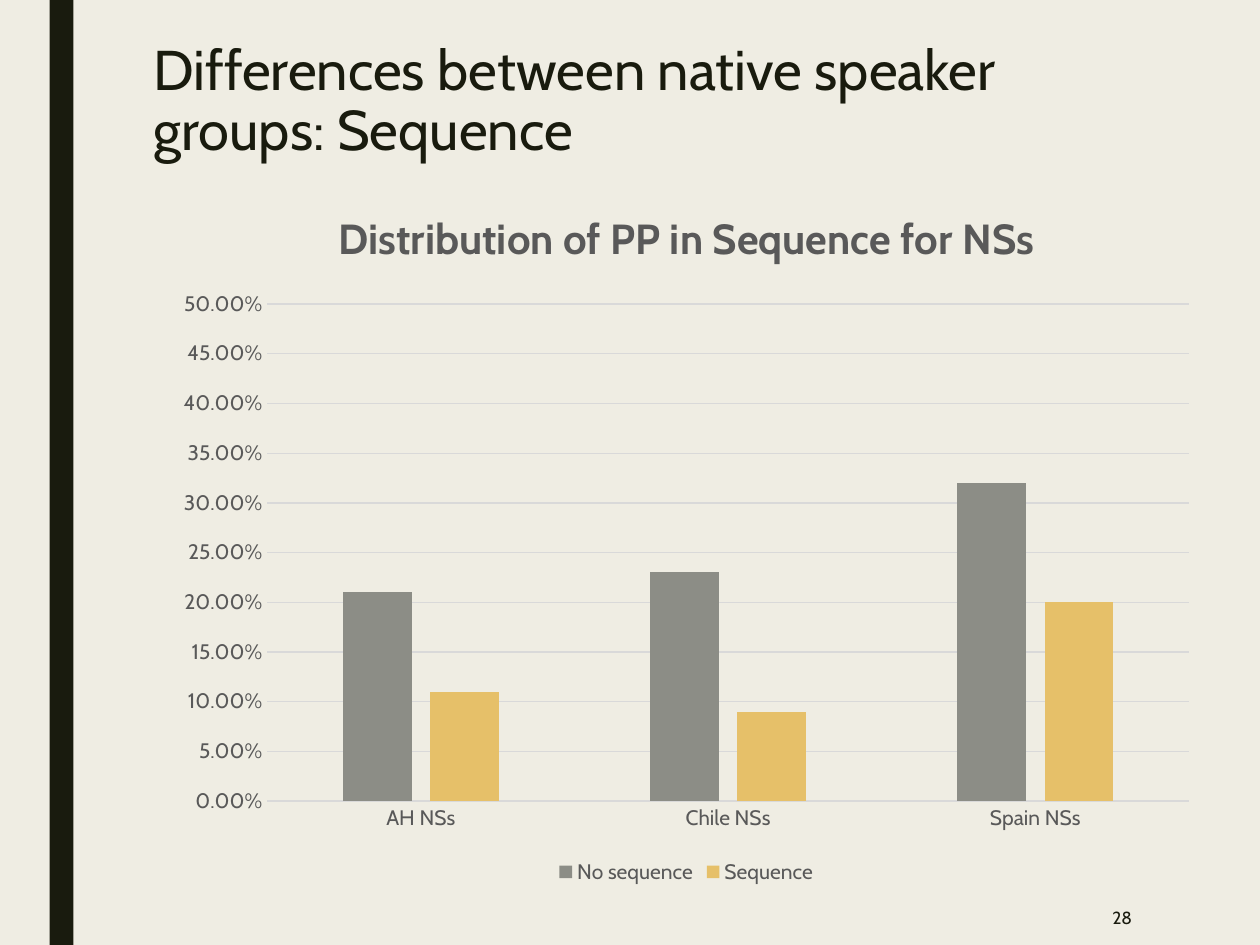
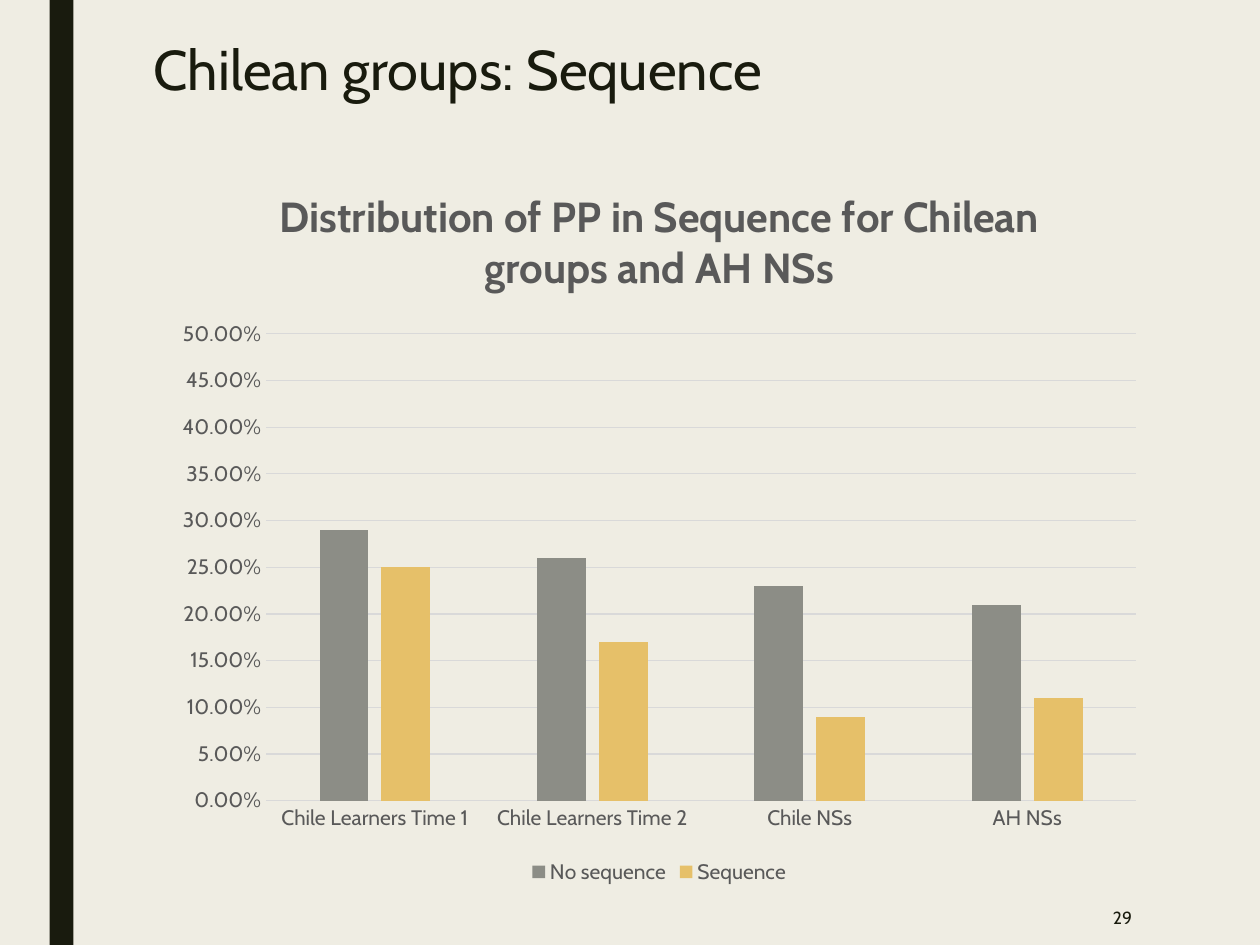
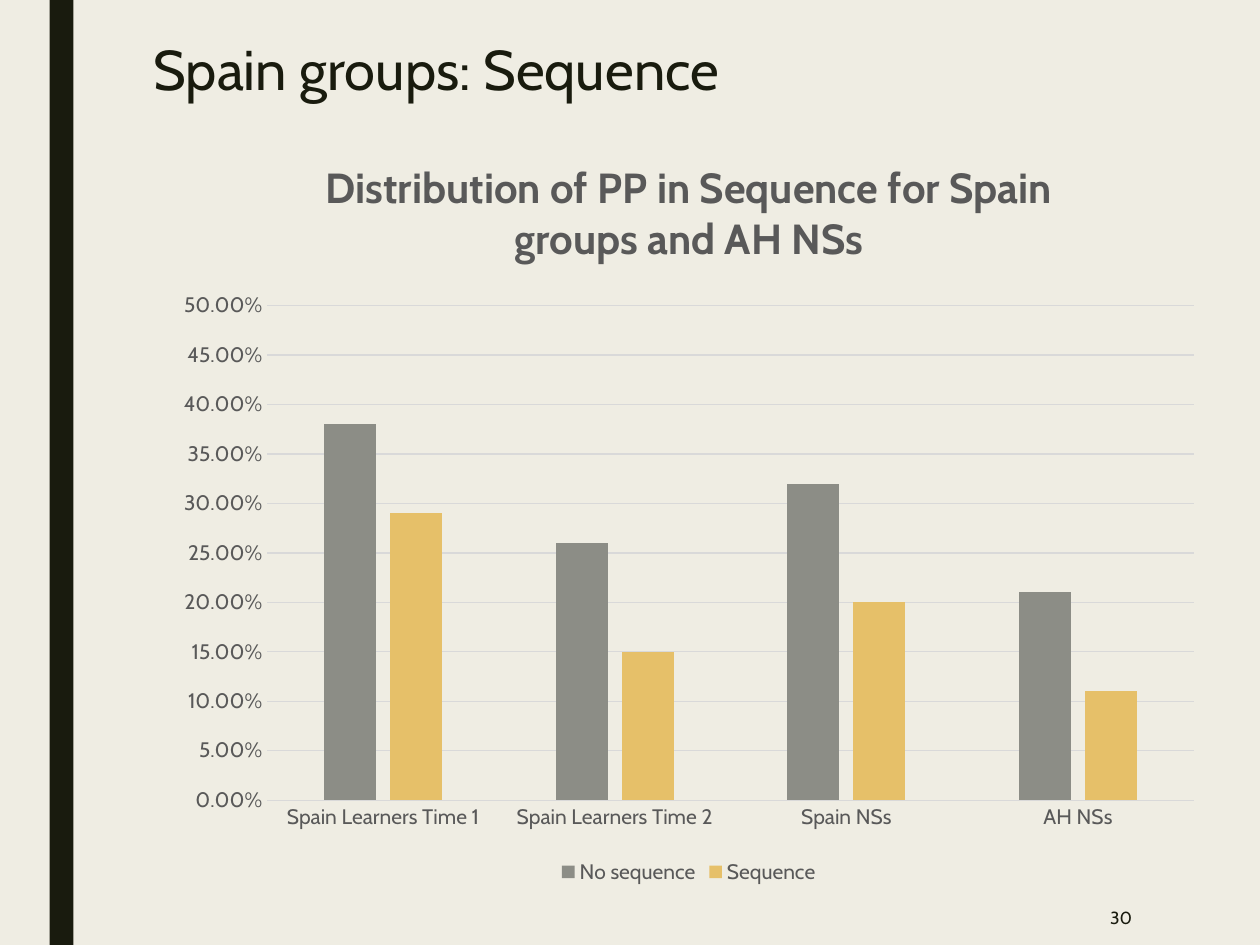
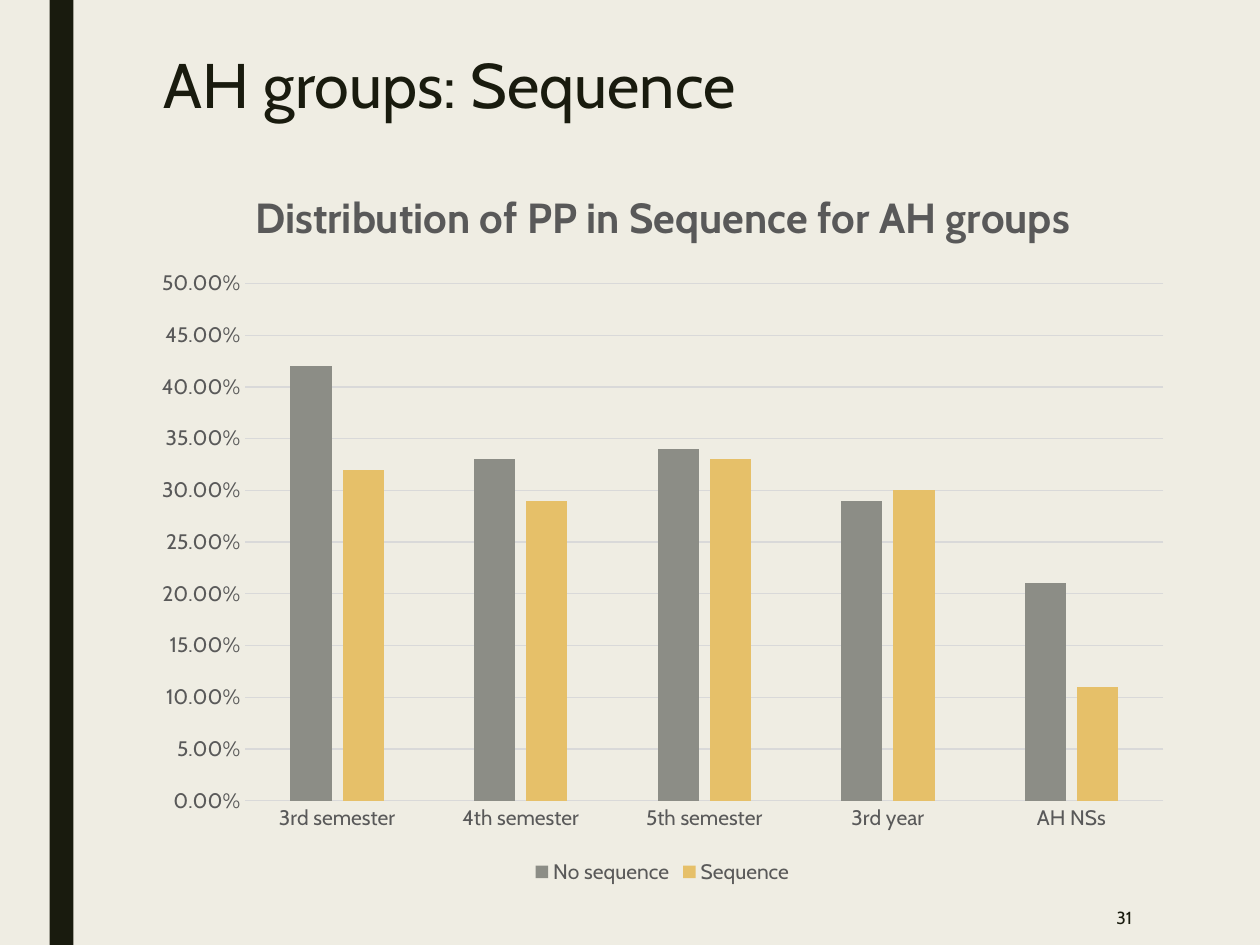
from pptx import Presentation
from pptx.chart.data import CategoryChartData
from pptx.dml.color import RGBColor
from pptx.enum.chart import XL_CHART_TYPE, XL_LEGEND_POSITION, XL_TICK_MARK
from pptx.enum.shapes import MSO_SHAPE
from pptx.enum.text import MSO_ANCHOR, MSO_AUTO_SIZE, PP_ALIGN
from pptx.util import Cm, Pt

# Shared style
FONT = "Cabin"
CREAM = RGBColor(0xEF, 0xED, 0xE3)
INK = RGBColor(0x19, 0x1B, 0x0E)
CHART_TEXT = RGBColor(0x59, 0x59, 0x59)
GRID = RGBColor(0xD9, 0xD9, 0xD9)
GRAY = RGBColor(0x8C, 0x8D, 0x86)
GOLD = RGBColor(0xE6, 0xC0, 0x69)

SLIDE_W, SLIDE_H = 25.4, 19.05
CHART_BOTTOM = 17.93
FIRST_PAGE = 28
SERIES = [("No sequence", GRAY), ("Sequence", GOLD)]
TITLE_BOX = (2.84, 0.74, 20.02, 2.41)

# Content: boxes in cm; each group has its share for every series
SLIDES = [
    {
        "title": "Differences between native speaker groups: Sequence",
        "title_box": TITLE_BOX, "title_size": 32,
        "chart_title": "Distribution of PP in Sequence for NSs",
        "chart_place": (3.28, 3.63, 21.11),
        "groups": [("AH NSs", 0.21, 0.11), ("Chile NSs", 0.23, 0.09),
                   ("Spain NSs", 0.32, 0.2)],
    },
    {
        "title": "Chilean groups: Sequence",
        "title_box": TITLE_BOX, "title_size": 32,
        "chart_title": "Distribution of PP in Sequence for Chilean groups and AH NSs",
        "chart_place": (3.28, 3.18, 20.02),
        "groups": [("Chile Learners Time 1", 0.29, 0.25),
                   ("Chile Learners Time 2", 0.26, 0.17),
                   ("Chile NSs", 0.23, 0.09), ("AH NSs", 0.21, 0.11)],
    },
    {
        "title": "Spain groups: Sequence",
        "title_box": TITLE_BOX, "title_size": 32,
        "chart_title": "Distribution of PP in Sequence for Spain groups and AH NSs",
        "chart_place": (3.28, 2.59, 21.21),
        "groups": [("Spain Learners Time 1", 0.38, 0.29),
                   ("Spain Learners Time 2", 0.26, 0.15),
                   ("Spain NSs", 0.32, 0.2), ("AH NSs", 0.21, 0.11)],
    },
    {
        "title": "AH groups: Sequence",
        "title_box": (3.05, 0.97, 20.02, 1.88), "title_size": 36,
        "chart_title": "Distribution of PP in Sequence for AH groups",
        "chart_place": (2.84, 3.2, 21.03),
        "groups": [("3rd semester", 0.42, 0.32), ("4th semester", 0.33, 0.29),
                   ("5th semester", 0.34, 0.33), ("3rd year", 0.29, 0.3),
                   ("AH NSs", 0.21, 0.11)],
    },
]


def style_font(font, size, color, bold=False):
    font.name, font.size, font.bold = FONT, Pt(size), bold
    font.color.rgb = color


def write(frame, text, size, color, align, bold=False):
    paragraph = frame.paragraphs[0]
    paragraph.alignment = align
    run = paragraph.add_run()
    run.text = text
    style_font(run.font, size, color, bold)
    return paragraph


def add_band(slide):
    band = slide.shapes.add_shape(MSO_SHAPE.RECTANGLE, Cm(1), 0, Cm(0.48), Cm(SLIDE_H))
    band.shadow.inherit = False
    band.fill.solid()
    band.fill.fore_color.rgb = INK
    band.line.fill.background()


def set_title(slide, text, box, size):
    title = slide.shapes.title
    title.left, title.top, title.width, title.height = map(Cm, box)
    frame = title.text_frame
    frame.auto_size = MSO_AUTO_SIZE.NONE
    frame.vertical_anchor = MSO_ANCHOR.TOP
    write(frame, text, size, INK, PP_ALIGN.LEFT).line_spacing = 0.89


def add_page_number(slide, number):
    frame = slide.shapes.add_textbox(Cm(19.74), Cm(17.93), Cm(3.33), Cm(1.12)).text_frame
    frame.word_wrap = True
    frame.vertical_anchor = MSO_ANCHOR.MIDDLE
    write(frame, str(number), 10, INK, PP_ALIGN.RIGHT)


def style_axis(axis):
    axis.major_tick_mark = axis.minor_tick_mark = XL_TICK_MARK.NONE
    style_font(axis.tick_labels.font, 12, CHART_TEXT)


def style_line(line):
    line.color.rgb = GRID
    line.width = Pt(0.75)


def add_bar_chart(slide, heading, place, groups):
    names, *shares = zip(*groups)
    data = CategoryChartData(number_format="0.00%")
    data.categories = names
    for (series_name, _), values in zip(SERIES, shares):
        data.add_series(series_name, values)
    left, top, width = place
    chart = slide.shapes.add_chart(
        XL_CHART_TYPE.COLUMN_CLUSTERED, Cm(left), Cm(top), Cm(width),
        Cm(CHART_BOTTOM - top), data).chart
    style_font(chart.font, 10, RGBColor(0, 0, 0))

    # Heading and legend
    chart.has_title = True
    chart.chart_title.include_in_layout = False
    write(chart.chart_title.text_frame, heading, 24, CHART_TEXT, PP_ALIGN.CENTER, True)
    chart.has_legend = True
    chart.legend.position = XL_LEGEND_POSITION.BOTTOM
    chart.legend.include_in_layout = False
    style_font(chart.legend.font, 12, CHART_TEXT)

    # Axes
    groups_axis, share_axis = chart.category_axis, chart.value_axis
    style_axis(groups_axis)
    style_line(groups_axis.format.line)
    style_axis(share_axis)
    share_axis.format.line.fill.background()
    share_axis.minimum_scale, share_axis.maximum_scale = 0, 0.5
    share_axis.major_unit = 0.05
    share_axis.has_major_gridlines = True
    style_line(share_axis.major_gridlines.format.line)
    share_axis.tick_labels.number_format = "0.00%"
    share_axis.tick_labels.number_format_is_linked = False

    # Bars
    plot = chart.plots[0]
    plot.vary_by_categories = False
    plot.gap_width, plot.overlap = 219, -27
    for bars, (_, color) in zip(plot.series, SERIES):
        bars.format.fill.solid()
        bars.format.fill.fore_color.rgb = color


def main():
    deck = Presentation()
    deck.slide_width, deck.slide_height = Cm(SLIDE_W), Cm(SLIDE_H)
    background = deck.slide_master.background.fill
    background.solid()
    background.fore_color.rgb = CREAM
    title_only = deck.slide_layouts.get_by_name("Title Only")
    for number, content in enumerate(SLIDES, FIRST_PAGE):
        slide = deck.slides.add_slide(title_only)
        add_band(slide)
        set_title(slide, content["title"], content["title_box"], content["title_size"])
        add_page_number(slide, number)
        add_bar_chart(slide, content["chart_title"], content["chart_place"],
                      content["groups"])
    deck.save("out.pptx")


if __name__ == "__main__":
    main()
